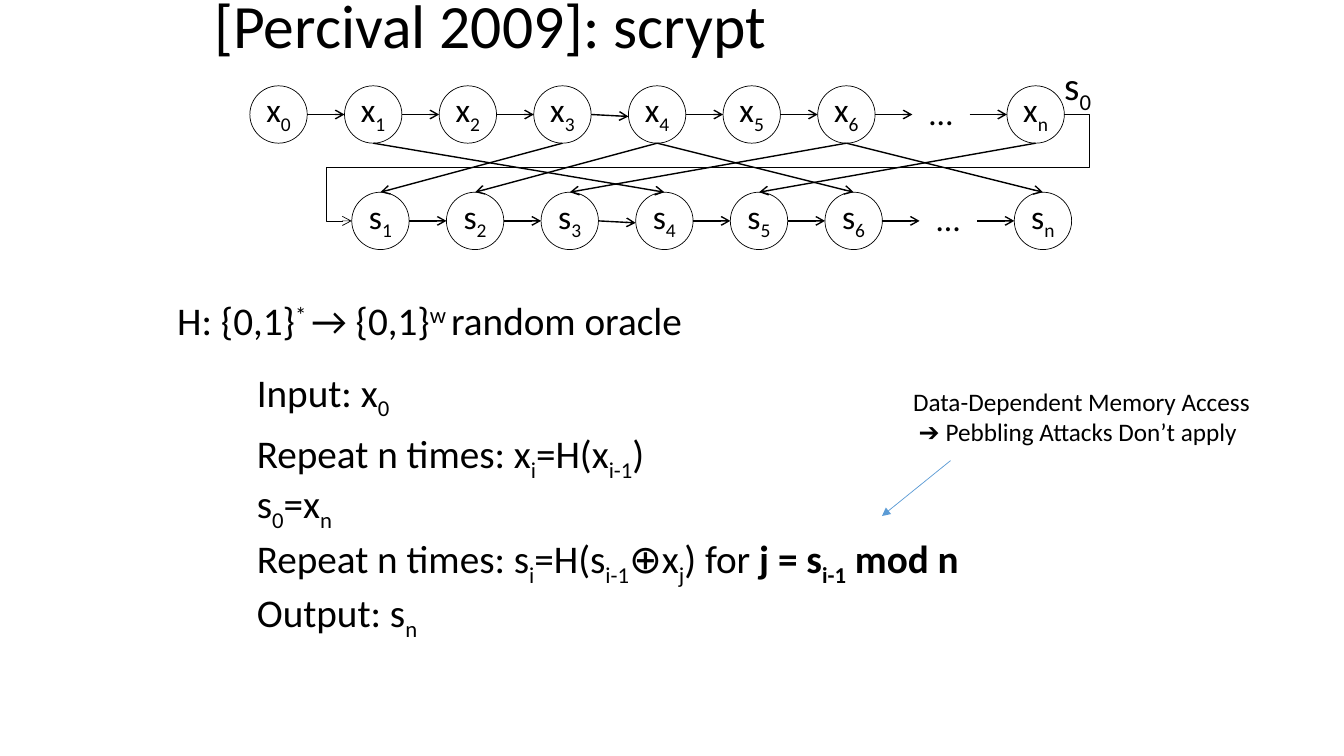
from lxml import etree
from pptx import Presentation
from pptx.dml.color import RGBColor
from pptx.enum.shapes import MSO_CONNECTOR as Line, MSO_SHAPE as Preset
from pptx.enum.text import MSO_ANCHOR as Anchor, MSO_AUTO_SIZE as AutoSize, PP_ALIGN as Align
from pptx.oxml.ns import qn
from pptx.util import Pt

BLACK, BLUE = "000000", "5B9BD5"


def write(frame, text, size=28, align=Align.LEFT, spacing=1.0, wrap=True, anchor=Anchor.TOP):
    """Lines split at newlines, runs at |; a run may start with _ sub, ^ super, ! bold."""
    frame.word_wrap, frame.auto_size, frame.vertical_anchor = wrap, AutoSize.NONE, anchor
    for number, line in enumerate(text.split("\n")):
        paragraph = frame.add_paragraph() if number else frame.paragraphs[0]
        paragraph.alignment, paragraph.line_spacing = align, spacing
        paragraph.space_before = Pt(0)
        for piece in line.split("|"):
            marks = piece[:len(piece) - len(piece.lstrip("_^!"))]
            run = paragraph.add_run()
            run.text = piece[len(marks):]
            run.font.name, run.font.size = "Calibri", Pt(size)
            run.font.color.rgb = RGBColor.from_string(BLACK)
            run.font.bold = "!" in marks
            if "_" in marks or "^" in marks:
                run.font._element.set("baseline", "-25000" if "_" in marks else "30000")


def arrow(start, end, color=BLACK, width=1, head="arrow", kind=Line.STRAIGHT):
    connector = slide.shapes.add_connector(kind, *(Pt(v) for v in (*start, *end)))
    connector.line.color.rgb = RGBColor.from_string(color)
    connector.line.width = Pt(width)
    etree.SubElement(connector.line._get_or_add_ln(), qn("a:tailEnd"), type=head)
    etree.SubElement(connector._element.spPr, qn("a:effectLst"))
    return connector


deck = Presentation()
deck.slide_width, deck.slide_height = Pt(960), Pt(540)
slide = deck.slides.add_slide(deck.slide_layouts[5])

# Title
title = slide.shapes.title
title.left, title.top, title.width, title.height = Pt(146), Pt(-24.5), Pt(684), Pt(90)
write(title.text_frame, "[Percival 2009]: scrypt", size=44, spacing=0.9, anchor=Anchor.MIDDLE)

# Two chains of nodes
NODE, PITCH = 41, 67.6
X_LEFT, X_TOP = 178.5, 61.3
S_LEFT, S_TOP = 251.3, 137.3
chains = [
    ("x", "0123456…n", X_LEFT, X_TOP),
    ("s", "123456…n", S_LEFT, S_TOP),
]
for letter, indices, chain_left, top in chains:
    for position, index in enumerate(indices):
        left, middle = chain_left + position * PITCH, top + NODE / 2
        node = slide.shapes.add_shape(Preset.OVAL, Pt(left), Pt(top), Pt(NODE), Pt(NODE))
        node.shadow.inherit = False
        node.fill.background()
        if index == "…":
            node.line.fill.background()
        else:
            node.line.color.rgb = RGBColor.from_string(BLACK)
            node.line.width = Pt(0.5)
        frame = node.text_frame
        frame.margin_top, frame.margin_bottom = Pt(0), Pt(3.6)
        write(frame, index if index == "…" else f"{letter}|_{index}", size=24,
              align=Align.CENTER, wrap=False, anchor=Anchor.MIDDLE)
        if index != "n":
            dip = 1.4 if index == "3" else 0
            arrow((left + NODE, middle), (left + PITCH, middle + dip))

# Data-dependent reads: x position to s position (8 is n in both chains)
for source, target in [(3, 1), (4, 2), (6, 3), (1, 4), (8, 5), (4, 6), (6, 8)]:
    arrow((X_LEFT + source * PITCH + NODE / 2, X_TOP + NODE),
          (S_LEFT + (target - 1) * PITCH + NODE / 2, S_TOP))

# Feedback from the last x to the first s
feedback = arrow((X_LEFT + 8 * PITCH + NODE, X_TOP + NODE / 2),
                 (S_LEFT, S_TOP + NODE / 2), width=0.5, kind=Line.ELBOW)
outline = feedback._element.spPr.find(qn("a:prstGeom"))
outline.set("prst", "bentConnector5")
bends = outline.find(qn("a:avLst"))
for number, bend in enumerate((-3500, 50000, 103500), 1):
    etree.SubElement(bends, qn("a:gd"), name=f"adj{number}", fmla=f"val {bend}")

# Oracle, algorithm steps and the s0 label
passages = [
    ("H: {0,1}|^* |→ {0,1}|^w |random oracle", 119.5, 211.7, 481, 0.9),
    ("Input: x|_0", 176.4, 259.2, 197, 1.0),
    ("Repeat n times: x|_i|=H(x|_i-1|)", 176.4, 303.1, 502, 1.0),
    ("s|_0|=x|_n", 176.4, 339.1, 210, 1.0),
    ("Repeat n times: s|_i|=H(s|_i-1|⊕x|_j|) for |!j = s|!_i-1|! mod n",
     176.4, 378, 560, 1.0),
    ("Output: s|_n", 176.4, 416.9, 197, 1.0),
    ("s|_0", 753.1, 40.3, 41, 1.0),
]
for text, left, top, width, spacing in passages:
    passage = slide.shapes.add_textbox(Pt(left), Pt(top), Pt(width), Pt(52))
    write(passage.text_frame, text, spacing=spacing)

# Remark on memory access
arrow((679, 329), (630, 368.6), color=BLUE, width=0.5, head="triangle")
remark = slide.shapes.add_textbox(Pt(645.1), Pt(272.2), Pt(257.8), Pt(51))
write(remark.text_frame, "Data-Dependent Memory Access\n ➔ Pebbling Attacks Don’t apply",
      size=18, wrap=False)

deck.save("out.pptx")
